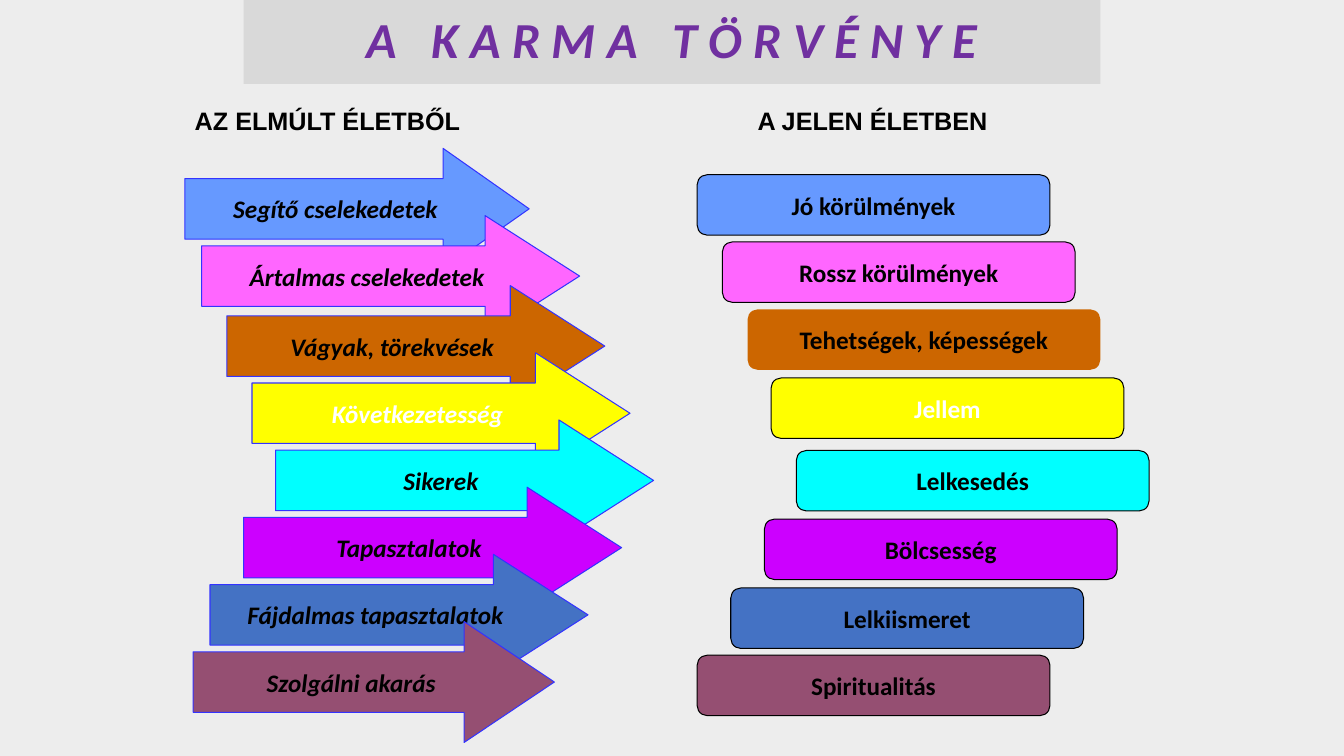
from dataclasses import dataclass

from pptx import Presentation
from pptx.dml.color import RGBColor
from pptx.enum.shapes import MSO_SHAPE
from pptx.enum.text import MSO_ANCHOR, MSO_AUTO_SIZE, PP_ALIGN
from pptx.shapes.autoshape import Shape
from pptx.slide import Slide
from pptx.text.text import _Paragraph as Paragraph, _Run as Run
from pptx.util import Pt

COLORS = {
    "background": "EDEDED", "title_fill": "D9D9D9", "title_text": "7030A0",
    "arrow_line": "3333FF", "black": "000000", "white": "FFFFFF",
    "sky": "6699FF", "pink": "FF66FF", "brown": "CC6600", "yellow": "FFFF00",
    "cyan": "00FFFF", "violet": "CC00FF", "blue": "4472C4", "plum": "954F72",
}
TITLE_WORDS = ["A", "K A R M A", "T Ö R V É N Y E"]
WORD_GAP = 16.3
ARROW_HEIGHT = 86.4
BOX_WIDTH, BOX_HEIGHT = 252, 43.2


@dataclass
class KarmaLink:
    """A deed from the past life and its outcome in the present one."""
    fill: str
    deed: str
    arrow_left: float
    arrow_top: float
    outcome: str
    box_left: float
    box_top: float
    arrow_width: float = 270
    text_color: str = "black"
    box_line: str | None = "black"


@dataclass
class Heading:
    text: str
    left: float
    width: float


LINKS = [
    KarmaLink("sky", "Segítő cselekedetek", 132, 106, "Jó körülmények", 498, 124.8, arrow_width=246),
    KarmaLink("pink", "Ártalmas cselekedetek", 144, 154, "Rossz körülmények", 516, 172.8),
    KarmaLink("brown", "Vágyak, törekvések", 162, 204, "Tehetségek, képességek", 534, 221, box_line=None),
    KarmaLink("yellow", "Következetesség", 180, 252, "Jellem", 550.8, 270, text_color="white"),
    KarmaLink("cyan", "Sikerek", 196.8, 300, "Lelkesedés", 568.8, 321.8),
    KarmaLink("violet", "Tapasztalatok", 174, 348, "Bölcsesség", 546, 370.8),
    KarmaLink("blue", "Fájdalmas tapasztalatok", 150, 396, "Lelkiismeret", 522, 420),
    KarmaLink("plum", "Szolgálni akarás", 138, 444, "Spiritualitás", 498, 468, arrow_width=258),
]
HEADINGS = [
    Heading("AZ ELMÚLT ÉLETBŐL", 132, 206),
    Heading("A JELEN ÉLETBEN", 534, 181),
]


def rgb(name: str) -> RGBColor:
    return RGBColor.from_string(COLORS[name])


def add_run(paragraph: Paragraph, text: str, color: str = "black", size: float = 18,
            font_name: str = "Calibri", italic: bool = False) -> Run:
    run = paragraph.add_run()
    run.text = text
    font = run.font
    font.name, font.size = font_name, Pt(size)
    font.bold, font.italic = True, italic
    font.color.rgb = rgb(color)
    return run


def add_title(slide: Slide) -> None:
    title = slide.shapes.title
    title.left, title.top, title.width, title.height = Pt(174), Pt(0), Pt(612), Pt(60)
    title.fill.solid()
    title.fill.fore_color.rgb = rgb("title_fill")
    frame = title.text_frame
    frame.auto_size = MSO_AUTO_SIZE.NONE
    frame.vertical_anchor = MSO_ANCHOR.MIDDLE
    paragraph = frame.paragraphs[0]
    paragraph.alignment = PP_ALIGN.CENTER
    paragraph.line_spacing = 0.9
    for index, word in enumerate(TITLE_WORDS):
        if index:
            gap = add_run(paragraph, " ", "title_text", 36, italic=True)
            gap.font._element.set("spc", str(round(WORD_GAP * 100)))
        add_run(paragraph, word, "title_text", 36, italic=True)


def add_label_shape(slide: Slide, kind: MSO_SHAPE, left: float, top: float, width: float,
                    height: float, text: str, fill: str, line: str | None,
                    text_color: str, italic: bool = False) -> Shape:
    shape = slide.shapes.add_shape(kind, Pt(left), Pt(top), Pt(width), Pt(height))
    shape.shadow.inherit = False
    shape.fill.solid()
    shape.fill.fore_color.rgb = rgb(fill)
    if line:
        shape.line.color.rgb = rgb(line)
        shape.line.width = Pt(0.75)
    else:
        shape.line.fill.background()
    frame = shape.text_frame
    frame.word_wrap = False
    frame.vertical_anchor = MSO_ANCHOR.MIDDLE
    paragraph = frame.paragraphs[0]
    paragraph.alignment = PP_ALIGN.CENTER
    add_run(paragraph, text, text_color, italic=italic)
    return shape


def add_link(slide: Slide, link: KarmaLink) -> None:
    arrow = add_label_shape(slide, MSO_SHAPE.RIGHT_ARROW, link.arrow_left, link.arrow_top,
                            link.arrow_width, ARROW_HEIGHT, link.deed, link.fill,
                            "arrow_line", link.text_color, italic=True)
    arrow.adjustments[0] = 0.5
    arrow.adjustments[1] = link.arrow_width / 4 / ARROW_HEIGHT
    add_label_shape(slide, MSO_SHAPE.FLOWCHART_ALTERNATE_PROCESS, link.box_left, link.box_top,
                    BOX_WIDTH, BOX_HEIGHT, link.outcome, link.fill,
                    link.box_line, link.text_color)


def add_heading(slide: Slide, heading: Heading) -> None:
    box = slide.shapes.add_textbox(Pt(heading.left), Pt(72), Pt(heading.width), Pt(29))
    frame = box.text_frame
    frame.word_wrap = False
    frame.auto_size = MSO_AUTO_SIZE.SHAPE_TO_FIT_TEXT
    add_run(frame.paragraphs[0], heading.text, font_name="Arial")


def main() -> None:
    presentation = Presentation()
    presentation.slide_width, presentation.slide_height = Pt(960), Pt(540)
    slide = presentation.slides.add_slide(presentation.slide_layouts.get_by_name("Title Only"))
    slide.background.fill.solid()
    slide.background.fill.fore_color.rgb = rgb("background")
    add_title(slide)
    for link in LINKS:
        add_link(slide, link)
    for heading in HEADINGS:
        add_heading(slide, heading)
    presentation.save("out.pptx")


if __name__ == "__main__":
    main()
